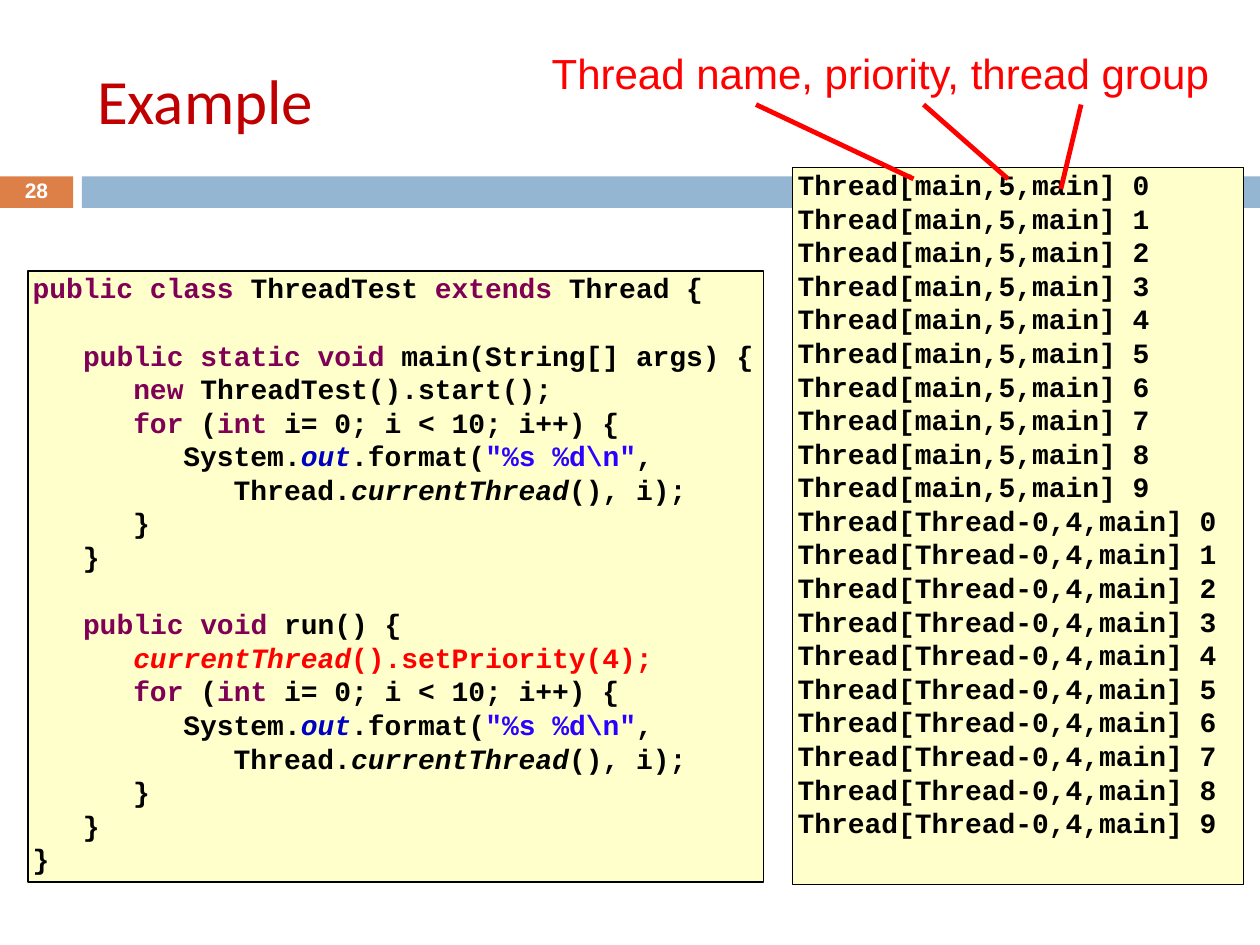
from lxml import etree
from pptx import Presentation
from pptx.dml.color import RGBColor
from pptx.enum.shapes import MSO_CONNECTOR, MSO_SHAPE
from pptx.enum.text import MSO_ANCHOR, PP_ALIGN
from pptx.oxml.ns import qn
from pptx.util import Inches, Pt

RECT = MSO_SHAPE.RECTANGLE
LINE = MSO_CONNECTOR.STRAIGHT
TOP, MIDDLE = MSO_ANCHOR.TOP, MSO_ANCHOR.MIDDLE
LEFT, CENTER = PP_ALIGN.LEFT, PP_ALIGN.CENTER

RED, BLACK = "FF0000", "000000"

# Code styles: mark -> colour, italic
STYLES = {
    "@k": ("7F0055", False),  # keyword
    "@f": ("0000C0", True),   # static field
    "@s": ("2A00FF", False),  # string
    "@m": (BLACK, True),      # static method
    "@r": (RED, False),       # stressed code
    "@i": (RED, True),        # stressed method
}

# Code lines: parts are split at "|", a mark opens a styled part
LOOP = [
    "      |@kfor| (|@kint| i= 0; i < 10; i++) {",
    '         System.|@fout|.format(|@s"%s %d\\n"|,',
    "            Thread.|@mcurrentThread|(), i);",
    "      }",
    "   }",
]
CODE = [
    "@kpublic class| ThreadTest |@kextends| Thread {",
    "",
    "   |@kpublic static void| main(String[] args) {",
    "      |@knew| ThreadTest().start();",
    *LOOP,
    "",
    "   |@kpublic void| run() {",
    "      |@icurrentThread|@r().setPriority(4);",
    *LOOP,
    "}",
]
OUTPUT = [f"Thread[{name},{rank},main] {i}"
          for name, rank in (("main", 5), ("Thread-0", 4))
          for i in range(10)]

# Callout lines: start x, end x, end y
CALLS = [(6, 7.25, 1.42), (7.33, 8, 1.42), (8.58, 8.42, 1.5)]


def color(code):
    return RGBColor.from_string(code)


def set_font(font, face, size, tint, bold=False, italic=False):
    font.name = face
    font.size = Pt(size)
    font.bold = bold
    font.italic = italic
    font.color.rgb = color(tint)


def add_rect(slide, box, fill, edge=None):
    rect = slide.shapes.add_shape(RECT, *map(Inches, box))
    rect.shadow.inherit = False
    rect.fill.solid()
    rect.fill.fore_color.rgb = color(fill)
    if edge:
        rect.line.color.rgb = color(edge)
        rect.line.width = Pt(1)
    else:
        rect.line.fill.background()
    return rect


def add_label(shapes, box, text, size, tint, bold=False, wrap=True):
    label = shapes.add_textbox(*map(Inches, box))
    frame = label.text_frame
    frame.text = text
    frame.word_wrap = wrap
    set_font(frame.paragraphs[0].runs[0].font, "Arial", size, tint, bold)
    return frame


def add_code(slide, box, lines, wrap):
    frame = add_rect(slide, box, "FFFFCC", BLACK).text_frame
    frame.margin_left = frame.margin_top = frame.margin_bottom = 0
    frame.margin_right = Inches(0.04)
    frame.vertical_anchor = TOP
    frame.word_wrap = wrap
    frame.text = "\n".join(lines)
    for para, line in zip(frame.paragraphs, lines):
        para.alignment = LEFT
        para._p.get_or_add_pPr().set("marL", str(Inches(0.04)))
        set_font(para.font, "Courier New", 16, BLACK, True)
        para.text = ""
        for part in filter(None, line.split("|")):
            tint, italic = STYLES.get(part[:2], (BLACK, False))
            run = para.add_run()
            run.text = part[2:] if part[:2] in STYLES else part
            set_font(run.font, "Courier New", 16, tint, True, italic)


def add_line(shapes, start, end):
    line = shapes.add_connector(LINE, *map(Inches, start + end))
    line.line.color.rgb = color(RED)
    line.line.width = Pt(2.75)
    etree.SubElement(line._element.spPr, qn("a:effectLst"))


def add_title(slide, text):
    title = slide.shapes.title
    title.left, title.top = Inches(0.67), Inches(0.25)
    title.width, title.height = Inches(8.92), Inches(1.08)
    frame = title.text_frame
    frame.text = text
    frame.vertical_anchor = MIDDLE
    para = frame.paragraphs[0]
    para.alignment = LEFT
    set_font(para.runs[0].font, "Calibri", 36, "C00000")


def add_number(slide, text):
    frame = add_label(slide.shapes, (0, 1.39, 0.58, 0.27), text, 12,
                      "FFFFFF", bold=True)
    frame.vertical_anchor = MIDDLE
    para = frame.paragraphs[0]
    para.alignment = CENTER
    para.line_spacing = 0.8


def add_callout(slide):
    group = slide.shapes.add_group_shape()
    add_label(group.shapes, (4.28, 0.33, 5.47, 0.5),
              "Thread name, priority, thread group", 24, RED, wrap=False)
    for x, end_x, end_y in CALLS:
        add_line(group.shapes, (x, 0.83), (end_x, end_y))


def main():
    deck = Presentation()
    deck.slide_width, deck.slide_height = Inches(10), Inches(7.5)
    slide = deck.slides.add_slide(deck.slide_layouts[5])

    # Header band
    add_rect(slide, (0, 1.4, 0.58, 0.25), "DD8047")
    add_rect(slide, (0.65, 1.4, 9.35, 0.25), "94B6D2")
    add_title(slide, "Example")
    add_number(slide, "28")

    # Output and program
    add_code(slide, (6.29, 1.33, 3.58, 5.69), OUTPUT, wrap=True)
    add_code(slide, (0.22, 2.15, 5.84, 4.85), CODE, wrap=False)

    # Callout on the first output line
    add_callout(slide)
    deck.save("out.pptx")


if __name__ == "__main__":
    main()
